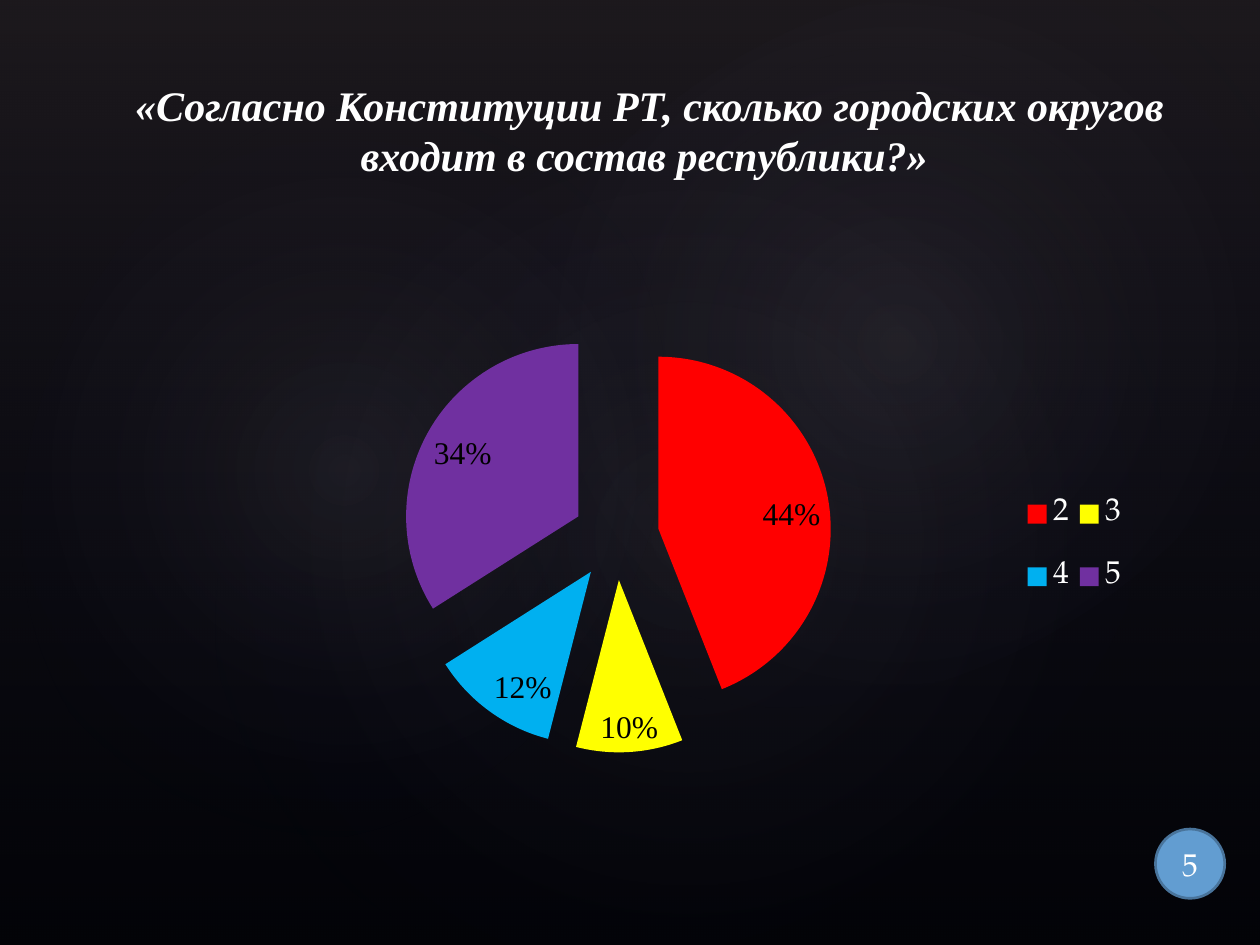
import pptx
import pptx.util
import pptx.dml.color
import pptx.chart.data
import pptx.enum.chart
import pptx.enum.shapes
import pptx.enum.text
import pptx.oxml
import pptx.oxml.ns

Inches = pptx.util.Inches
Pt = pptx.util.Pt
Shape = pptx.enum.shapes.MSO_SHAPE
SERIF = "Times New Roman"
BODY = "TeX Gyre Pagella"
COLORS = {
    "background": "000000", "text": "FFFFFF", "label": "000000",
    "haze": "504652", "glow": "C4BCC6", "navy": "242852",
    "badge": "629DD1", "badge_line": "49749B",
}
# Answer: share and slice colour
ANSWERS = {
    "2": (0.44, "FF0000"),
    "3": (0.10, "FFFF00"),
    "4": (0.12, "00B0F0"),
    "5": (0.34, "7030A0"),
}
# Glows: left, top, width, height, rotation, opacity in percent
GLOWS = [
    (1.5, 1.14, 7.92, 6.24, 328.7, 7),
    (-0.3, 1.28, 6.06, 4.9, 294.3, 8),
    (3.58, 0.13, 7.09, 5.2, 328.7, 8),
]
LINEAR = '<a:lin ang="5400000" scaled="0"/>'
RADIAL = ('<a:path path="circle"><a:fillToRect l="50000" t="50000" '
          'r="50000" b="50000"/></a:path>')


def rgb(value):
    return pptx.dml.color.RGBColor.from_string(value)


def style_font(font, name, size, color):
    font.name = name
    font.size = Pt(size)
    font.color.rgb = rgb(color)


def add_gradient_shape(page, kind, frame, stops, direction, rotation=0):
    """Add a shape with translucent gradient stops (place, colour, opacity)."""
    shape = page.shapes.add_shape(kind, *map(Inches, frame))
    shape.shadow.inherit = False
    shape.line.fill.background()
    shape.rotation = rotation
    stop_xml = "".join(
        f'<a:gs pos="{place * 1000}"><a:srgbClr val="{color}">'
        f'<a:alpha val="{opacity * 1000}"/></a:srgbClr></a:gs>'
        for place, color, opacity in stops)
    gradient = pptx.oxml.parse_xml(
        f'<a:gradFill {pptx.oxml.ns.nsdecls("a")} rotWithShape="1">'
        f'<a:gsLst>{stop_xml}</a:gsLst>{direction}</a:gradFill>')
    properties = shape.element.spPr
    properties.find(pptx.oxml.ns.qn("a:prstGeom")).addnext(gradient)


def add_background(page):
    page.background.fill.solid()
    page.background.fill.fore_color.rgb = rgb(COLORS["background"])
    add_gradient_shape(
        page, Shape.RECTANGLE, (0, 0, 10, 7.5),
        [(0, COLORS["haze"], 36), (100, COLORS["navy"], 10)], LINEAR)
    for *frame, rotation, opacity in GLOWS:
        add_gradient_shape(
            page, Shape.OVAL, frame,
            [(0, COLORS["glow"], opacity), (58, COLORS["navy"], 0),
             (100, COLORS["navy"], 0)], RADIAL, rotation)


def set_text(shape, text, name, size, anchor):
    frame = shape.text_frame
    frame.word_wrap = True
    frame.vertical_anchor = anchor
    frame.text = text
    para = frame.paragraphs[0]
    para.alignment = pptx.enum.text.PP_ALIGN.CENTER
    span = para.runs[0]
    style_font(span.font, name, size, COLORS["text"])
    return span


def add_title(page, text):
    box = page.shapes.add_textbox(
        Inches(0.55), Inches(0.23), Inches(9.21), Inches(1.25))
    span = set_text(box, text, SERIF, 24, pptx.enum.text.MSO_ANCHOR.BOTTOM)
    span.font.bold = True
    span.font.italic = True


def add_page_badge(page, number):
    badge = page.shapes.add_shape(
        Shape.OVAL, Inches(9.17), Inches(6.58), Inches(0.55), Inches(0.55))
    badge.shadow.inherit = False
    badge.fill.solid()
    badge.fill.fore_color.rgb = rgb(COLORS["badge"])
    badge.line.color.rgb = rgb(COLORS["badge_line"])
    badge.line.width = Pt(1.5)
    frame = badge.text_frame
    frame.margin_left = frame.margin_right = 0
    frame.margin_top = frame.margin_bottom = 0
    set_text(badge, number, BODY, 18, pptx.enum.text.MSO_ANCHOR.MIDDLE)


def make_layout(x, y, width, height, target=""):
    return pptx.oxml.parse_xml(
        f'<c:layout {pptx.oxml.ns.nsdecls("c")}><c:manualLayout>{target}'
        f'<c:xMode val="edge"/><c:yMode val="edge"/><c:x val="{x}"/>'
        f'<c:y val="{y}"/><c:w val="{width}"/><c:h val="{height}"/>'
        '</c:manualLayout></c:layout>')


def replace_layout(parent, layout, after=None):
    for old in parent.findall(pptx.oxml.ns.qn("c:layout")):
        parent.remove(old)
    if after is None:
        parent.insert(0, layout)
    else:
        after.addnext(layout)


def add_answer_chart(page):
    data = pptx.chart.data.CategoryChartData(number_format="0%")
    data.categories = list(ANSWERS)
    data.add_series("Series 1", [share for share, _ in ANSWERS.values()])
    chart = page.shapes.add_chart(
        pptx.enum.chart.XL_CHART_TYPE.PIE_EXPLODED, Inches(1.48),
        Inches(2.11), Inches(7.58), Inches(4.44), data).chart
    chart.has_title = False
    style_font(chart.font, BODY, 18, COLORS["text"])

    # Slices
    plot = chart.plots[0]
    plot.vary_by_categories = True
    series = plot.series[0]
    for index, (_, color) in enumerate(ANSWERS.values()):
        fill = series.points[index].format.fill
        fill.solid()
        fill.fore_color.rgb = rgb(color)
    for explosion in series._element.iter(pptx.oxml.ns.qn("c:explosion")):
        explosion.set("val", "25")

    # Labels
    labels = series.data_labels
    labels.show_value = True
    labels.number_format = "0%"
    labels.number_format_is_linked = False
    labels.position = pptx.enum.chart.XL_LABEL_POSITION.INSIDE_END
    style_font(labels.font, SERIF, 18, COLORS["label"])

    # Legend and plot area
    chart.has_legend = True
    legend = chart.legend
    legend.position = pptx.enum.chart.XL_LEGEND_POSITION.RIGHT
    legend.include_in_layout = False
    legend_element = legend._element
    replace_layout(legend_element, make_layout(0.87, 0.36, 0.12, 0.28),
                   legend_element.find(pptx.oxml.ns.qn("c:legendPos")))
    plot_area = chart._chartSpace.chart.plotArea
    replace_layout(plot_area, make_layout(
        0.08, 0.1, 0.74, 0.77, '<c:layoutTarget val="inner"/>'))


def main():
    deck = pptx.Presentation()
    deck.slide_width = Inches(10)
    deck.slide_height = Inches(7.5)
    page = deck.slides.add_slide(deck.slide_layouts[6])
    add_background(page)
    add_title(page, "«Согласно Конституции РТ, сколько городских округов "
                    "входит в состав республики?» ")
    add_page_badge(page, "5")
    add_answer_chart(page)
    deck.save("out.pptx")


if __name__ == "__main__":
    main()
